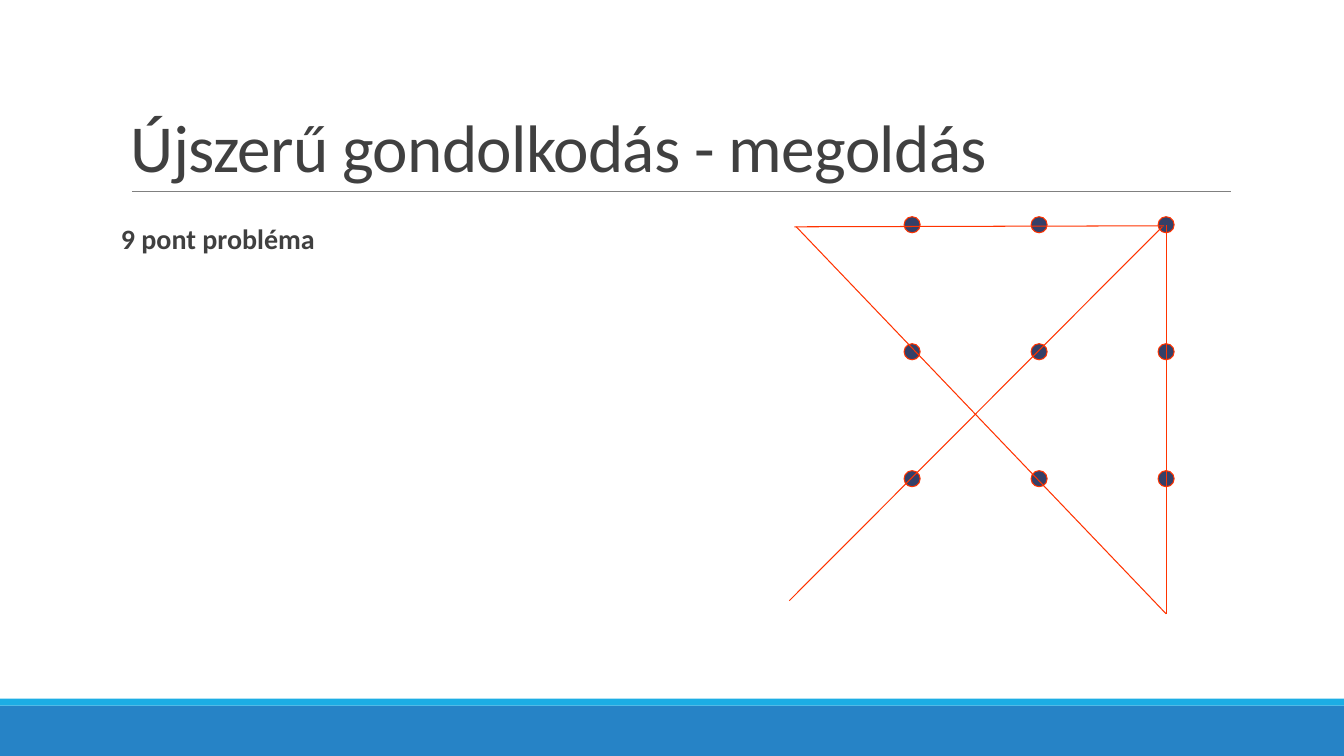
import pptx
import pptx.dml.color
import pptx.enum.shapes
import pptx.enum.text
import pptx.oxml.ns
import pptx.util
from lxml import etree

Pt = pptx.util.Pt

TITLE = "Újszerű gondolkodás - megoldás"
SUBTITLE = "9 pont probléma"
FONT = "Calibri"
TEXT_COLOUR = "404040"
DOT_COLOUR = "344068"
PATH_COLOUR = "FF3300"

BANDS = [
    (504, 36, "2683C6"),
    (499, 5, "1CADE4"),
]
GRID_LEFT, GRID_TOP, GRID_STEP, GRID_COUNT = 645.8, 154.8, 90.7, 3
DOT_SIZE = 11.5
STROKES = [
    ((563.8, 429.1), (830.2, 162)),
    ((833, 438.5), (833, 160.6)),
    ((833, 438.5), (568.8, 162)),
    ((831.6, 161.3), (567.4, 162)),
]

deck = pptx.Presentation()
deck.slide_width, deck.slide_height = Pt(960), Pt(540)
page = deck.slides.add_slide(deck.slide_layouts[6])


def colour(value):
    return pptx.dml.color.RGBColor.from_string(value)


def add_filled(kind, left, top, width, height, fill, outline=None):
    shape = page.shapes.add_shape(kind, Pt(left), Pt(top), Pt(width), Pt(height))
    shape.shadow.inherit = False
    shape.fill.solid()
    shape.fill.fore_color.rgb = colour(fill)
    if outline:
        shape.line.color.rgb = colour(outline)
        shape.line.width = Pt(0.75)
    else:
        shape.line.fill.background()


def add_line(start, end, stroke, width):
    line = page.shapes.add_connector(
        pptx.enum.shapes.MSO_CONNECTOR.STRAIGHT, *map(Pt, start + end))
    line.line.color.rgb = colour(stroke)
    line.line.width = Pt(width)
    etree.SubElement(line._element.spPr, pptx.oxml.ns.qn("a:effectLst"))


def add_text(text, left, top, width, height, size, spacing, anchor, inset, bold=False):
    box = page.shapes.add_textbox(Pt(left), Pt(top), Pt(width), Pt(height))
    frame = box.text_frame
    frame.word_wrap = True
    frame.vertical_anchor = anchor
    frame.margin_left = frame.margin_right = Pt(inset)
    frame.margin_top = frame.margin_bottom = Pt(3.6)
    frame.text = text
    para = frame.paragraphs[0]
    para.line_spacing = spacing
    span = para.runs[0]
    span.font.name = FONT
    span.font.size = Pt(size)
    span.font.bold = bold
    span.font.color.rgb = colour(TEXT_COLOUR)
    return span


shapes = pptx.enum.shapes.MSO_SHAPE
anchors = pptx.enum.text.MSO_ANCHOR

for top, height, fill in BANDS:
    add_filled(shapes.RECTANGLE, 0, top, 960, height, fill)
add_line((94.3, 136.8), (879.1, 136.8), "808080", 0.5)

title = add_text(TITLE, 86.4, 22.3, 792, 114.5, 48, 0.85, anchors.BOTTOM, 7.2)
title.font._element.set("spc", "-50")
add_text(SUBTITLE, 86.4, 157.7, 401, 178.6, 20, 0.9, anchors.TOP, 0, bold=True)

for row in range(GRID_COUNT):
    for column in range(GRID_COUNT):
        add_filled(shapes.OVAL, GRID_LEFT + column * GRID_STEP,
                   GRID_TOP + row * GRID_STEP, DOT_SIZE, DOT_SIZE,
                   DOT_COLOUR, PATH_COLOUR)

for start, end in STROKES:
    add_line(start, end, PATH_COLOUR, 0.75)

deck.save("out.pptx")
